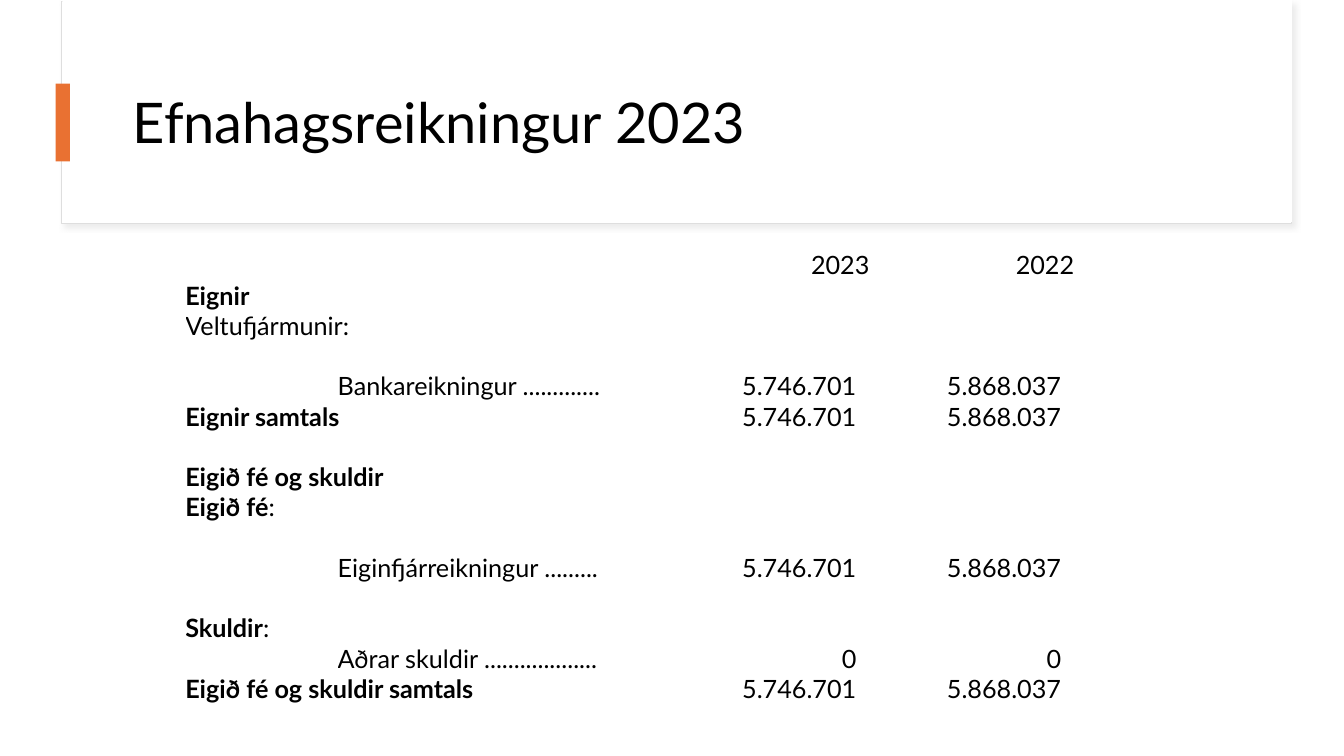
from dataclasses import dataclass

from lxml.etree import SubElement as Sub
from pptx import Presentation
from pptx.dml.color import RGBColor as Rgb
from pptx.enum.shapes import MSO_SHAPE as Kind
from pptx.enum.text import MSO_ANCHOR as Anchor, PP_ALIGN as Align
from pptx.oxml.ns import qn
from pptx.util import Cm, Pt


@dataclass(frozen=True)
class Theme:
    font: str = "Lato"
    ink: str = "000000"
    paper: str = "FFFFFF"
    edge: str = "DEDEDE"
    shade: str = "D9D9D9"
    accent: str = "E97132"
    title: int = 40
    body: int = 18


THEME = Theme()
WIDTHS = (3.84, 4.22, 4.22, 1.35, 3.61, 1.35, 3.81, 1.35, 1.35)
ROW = 0.76
YEARS = (4, 6)
PAD = 0.33
BANK = ("5.746.701", "5.868.037")

# Each row: first label column, label runs as (text, bold), figures
ROWS = (
    (0, (), ("2023", "2022")),
    (0, (("Eignir", True),), ()),
    (0, (("Veltufjármunir:", False),), ()),
    (0, (), ()),
    (1, (("Bankareikningur .............", False),), BANK),
    (0, (("Eignir samtals", True),), BANK),
    (0, (), ()),
    (0, (("Eigið fé og skuldir", True),), ()),
    (0, (("Eigið fé", True), (":", False)), ()),
    (0, (), ()),
    (1, (("Eiginfjárreikningur .........", False),), BANK),
    (0, (), ()),
    (0, (("Skuldir", True), (":", False)), ()),
    (1, (("Aðrar skuldir ...................", False),), ("0", "0")),
    (0, (("Eigið fé og skuldir samtals", True),), BANK),
    (0, (), ()),
)


def add_run(para, text, size, bold=False):
    run = para.add_run()
    run.text = text
    font = run.font
    font.name, font.size, font.bold = THEME.font, Pt(size), bold
    font.color.rgb = Rgb.from_string(THEME.ink)


def add_box(slide, box, fill, line=None):
    shape = slide.shapes.add_shape(Kind.RECTANGLE, *map(Cm, box))
    shape.shadow.inherit = False
    shape.fill.solid()
    shape.fill.fore_color.rgb = Rgb.from_string(fill)
    if line:
        shape.line.color.rgb = Rgb.from_string(line)
        shape.line.width = Pt(0.75)
    else:
        shape.line.fill.background()
    return shape


def add_shade(shape):
    """Give the shape a soft shadow to the lower right."""
    effects = shape._element.spPr.find(qn("a:effectLst"))
    outer = Sub(effects, qn("a:outerShdw"), blurRad=str(Pt(4)),
                dist=str(Pt(3)), dir="2700000", algn="tl", rotWithShape="0")
    color = Sub(outer, qn("a:srgbClr"), val=THEME.shade)
    Sub(color, qn("a:alpha"), val="50000")


def add_title(slide, text, box):
    frame = slide.shapes.add_textbox(*map(Cm, box)).text_frame
    frame.word_wrap = True
    frame.vertical_anchor = Anchor.MIDDLE
    para = frame.paragraphs[0]
    para.line_spacing = 0.9
    add_run(para, text, THEME.title)


def clear_cell(cell):
    """Drop fill and margins, and keep the empty line below the row height."""
    cell.fill.background()
    cell.vertical_anchor = Anchor.MIDDLE
    cell.margin_left = cell.margin_right = 0
    cell.margin_top = cell.margin_bottom = 0
    end = cell.text_frame.paragraphs[0]._p.get_or_add_endParaRPr()
    end.set("sz", "1000")


def fill_row(table, index, start, label, figures):
    if label:
        cell = table.cell(index, start)
        cell.merge(table.cell(index, 2))
        for text, bold in label:
            add_run(cell.text_frame.paragraphs[0], text, THEME.body, bold)
    for col, text in zip(YEARS, figures):
        cell = table.cell(index, col)
        cell.margin_right = Cm(PAD if index else 0)
        para = cell.text_frame.paragraphs[0]
        para.alignment = Align.RIGHT
        add_run(para, text, THEME.body)


def add_sheet(slide, left, top):
    frame = slide.shapes.add_table(
        len(ROWS), len(WIDTHS), Cm(left), Cm(top),
        Cm(sum(WIDTHS)), Cm(ROW * len(ROWS)))
    table = frame.table
    table.first_row = table.horz_banding = False
    for col, width in zip(table.columns, WIDTHS):
        col.width = Cm(width)
    for row in table.rows:
        row.height = Cm(ROW)
    for cell in table.iter_cells():
        clear_cell(cell)
    for index, row in enumerate(ROWS):
        fill_row(table, index, *row)


def main():
    deck = Presentation()
    deck.slide_width, deck.slide_height = Cm(33.87), Cm(19.05)
    slide = deck.slides.add_slide(deck.slide_layouts[6])
    card = add_box(slide, (1.55, 0.03, 31.01, 5.61), THEME.paper, THEME.edge)
    add_shade(card)
    add_box(slide, (1.57, 0, 30.99, 5.59), THEME.paper)
    add_title(slide, "Efnahagsreikningur 2023", (3.1, 1.52, 28.24, 3.28))
    add_box(slide, (1.4, 2.11, 0.36, 1.96), THEME.accent)
    add_sheet(slide, 4.67, 6.3)
    deck.save("out.pptx")


if __name__ == "__main__":
    main()
